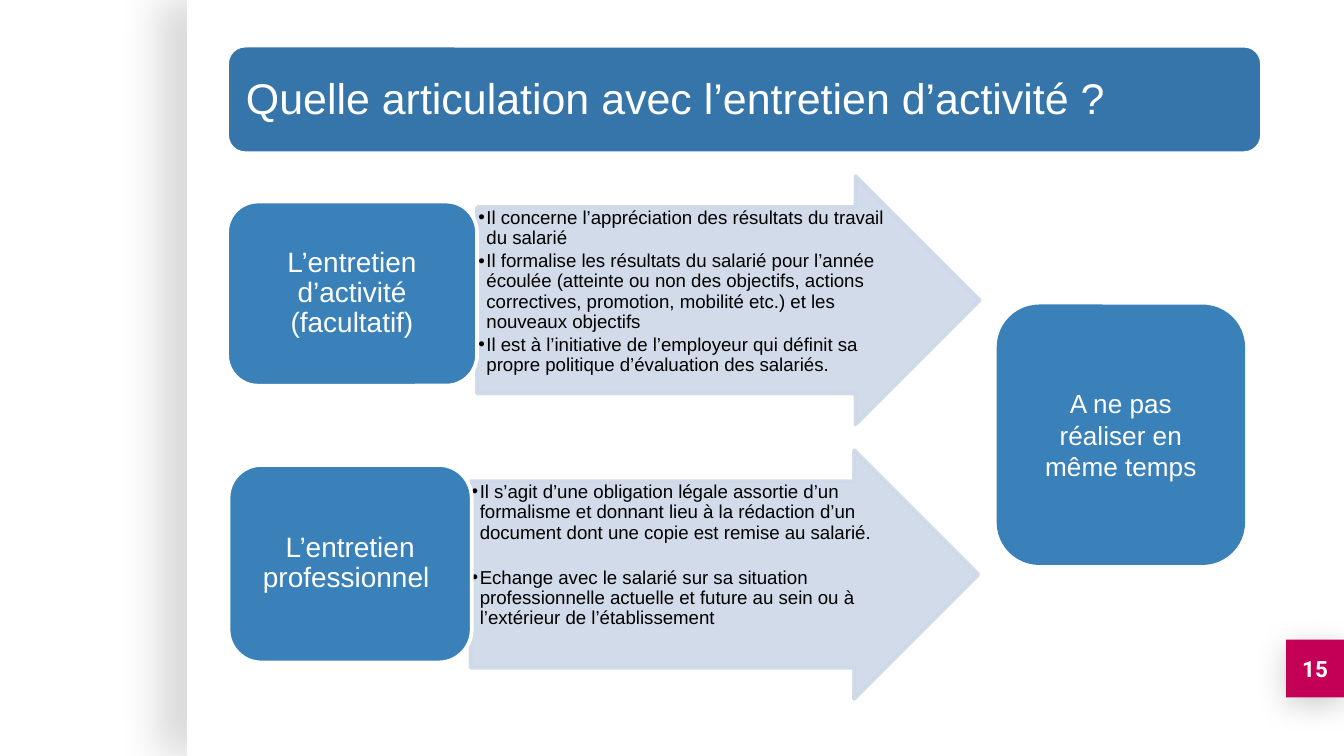
import pptx
import pptx.util
import pptx.dml.color
import pptx.enum.shapes
import pptx.enum.text
import pptx.oxml.ns
from dataclasses import dataclass
from lxml import etree

Inches = pptx.util.Inches
Pt = pptx.util.Pt
qn = pptx.oxml.ns.qn
Preset = pptx.enum.shapes.MSO_SHAPE
Align = pptx.enum.text.PP_ALIGN


@dataclass(frozen=True)
class Theme:
    white: str = "FFFFFF"
    black: str = "000000"
    banner: str = "3575A9"
    block: str = "3A81BA"
    arrow: str = "CED8E7"
    accent: str = "C40056"
    font: str = "Arial"
    number_font: str = "Roboto"
    title_size: float = 23
    topic_size: float = 15
    advice_size: float = 14
    number_size: float = 12
    detail_size: float = 10


theme = Theme()


def add_block(preset, place, fill, line=None):
    shape = slide.shapes.add_shape(preset, *map(Inches, place))
    shape.shadow.inherit = False
    shape.fill.solid()
    shape.fill.fore_color.rgb = pptx.dml.color.RGBColor.from_string(fill)
    if line:
        shape.line.color.rgb = pptx.dml.color.RGBColor.from_string(line)
        shape.line.width = Pt(2)
    else:
        shape.line.fill.background()
    return shape


def write_text(shape, texts, size, color=theme.white, font=theme.font, bold=False,
               align=Align.CENTER, anchor=pptx.enum.text.MSO_ANCHOR.MIDDLE,
               insets=(0.1, 0.1, 0.1, 0.1), spacing=0.9, after=0, gap=0, bullet=None):
    frame = shape.text_frame
    frame.word_wrap = True
    frame.auto_size = pptx.enum.text.MSO_AUTO_SIZE.NONE
    frame.vertical_anchor = anchor
    frame.margin_left, frame.margin_top, frame.margin_right, frame.margin_bottom = map(Inches, insets)
    for index, text in enumerate(texts):
        para = frame.add_paragraph() if index else frame.paragraphs[0]
        if bullet:
            properties = para._p.get_or_add_pPr()
            properties.set("marL", str(Inches(0.06)))
            properties.set("indent", str(-Inches(0.06)))
            bullet_color = etree.SubElement(properties, qn("a:buClr"))
            etree.SubElement(bullet_color, qn("a:srgbClr"), val=color)
            etree.SubElement(properties, qn("a:buFont"), typeface=font)
            etree.SubElement(properties, qn("a:buChar"), char=bullet)
        para.alignment = align
        para.line_spacing = spacing
        para.space_before = Pt(gap if index else 0)
        para.space_after = Pt(after)
        span = para.add_run()
        span.text = text
        span.font.name = font
        span.font.size = Pt(size)
        span.font.bold = bold
        span.font.color.rgb = pptx.dml.color.RGBColor.from_string(color)


deck = pptx.Presentation()
deck.slide_width = Inches(10)
deck.slide_height = deck.slide_width * 9 // 16
slide = deck.slides.add_slide(deck.slide_layouts[5])

panel = add_block(Preset.RECTANGLE, (1.39, 0, 8.61, 5.62), theme.white)
panel.height = deck.slide_height
number = add_block(Preset.RECTANGLE, (9.57, 4.76, 0.43, 0.43), theme.accent)
for shape, opacity, blur, distance, angle in [(panel, 15, 22.5, 15, 180), (number, 20, 16.9, 3.8, 90)]:
    effects = shape.element.spPr.find(qn("a:effectLst"))
    shadow = etree.SubElement(effects, qn("a:outerShdw"), blurRad=str(Pt(blur)), dist=str(Pt(distance)),
                              dir=str(angle * 60000), algn="ctr", rotWithShape="0")
    shadow_color = etree.SubElement(shadow, qn("a:srgbClr"), val=theme.black)
    etree.SubElement(shadow_color, qn("a:alpha"), val=str(opacity * 1000))
write_text(number, ["15"], theme.number_size, font=theme.number_font, bold=True, spacing=1)

banner = add_block(Preset.ROUNDED_RECTANGLE, (1.69, 0.34, 7.7, 0.8), theme.banner, theme.white)
title = slide.shapes.title
title.left, title.top, title.width, title.height = map(Inches, (1.73, 0.38, 7.62, 0.74))
banner.element.addnext(title.element)
write_text(title, ["Quelle articulation avec l’entretien d’activité ?"], theme.title_size, align=Align.LEFT)

interviews = [
    ("L’entretien d’activité (facultatif)", (1.69, 1.5, 1.86, 1.37), (3.55, 1.31, 3.74, 1.85), 0, [
        "Il concerne l’appréciation des résultats du travail du salarié",
        "Il formalise les résultats du salarié pour l’année écoulée (atteinte ou non des objectifs, "
        "actions correctives, promotion, mobilité etc.) et les nouveaux objectifs",
        "Il est à l’initiative de l’employeur qui définit sa propre politique d’évaluation des salariés.",
    ]),
    ("L’entretien professionnel ", (1.7, 3.46, 1.81, 1.47), (3.5, 3.35, 3.78, 1.85), 12, [
        "Il s’agit d’une obligation légale assortie d’un formalisme et donnant lieu à la rédaction "
        "d’un document dont une copie est remise au salarié.",
        "Echange avec le salarié sur sa situation professionnelle actuelle et future au sein ou à "
        "l’extérieur de l’établissement",
    ]),
]
for topic, topic_place, arrow_place, gap, details in interviews:
    arrow = add_block(Preset.RIGHT_ARROW, arrow_place, theme.arrow, theme.arrow)
    arrow.adjustments[0] = 0.75
    arrow.adjustments[1] = 0.5
    for tint in arrow.element.spPr.iter(qn("a:srgbClr")):
        etree.SubElement(tint, qn("a:alpha"), val="90000")
    left, top, width, height = arrow_place
    detail_place = (left, top + height / 8, width - 0.7, height * 0.75)
    detail_box = slide.shapes.add_textbox(*map(Inches, detail_place))
    write_text(detail_box, details, theme.detail_size, color=theme.black, align=Align.LEFT,
               anchor=pptx.enum.text.MSO_ANCHOR.TOP, insets=(0.01, 0.01, 0.01, 0.01),
               after=1.5, gap=gap, bullet="•")
    block = add_block(Preset.ROUNDED_RECTANGLE, topic_place, theme.block, theme.white)
    write_text(block, [topic], theme.topic_size, insets=(0.06, 0.03, 0.06, 0.03))

advice = add_block(Preset.ROUNDED_RECTANGLE, (7.43, 2.28, 1.82, 1.91), theme.block, theme.block)
write_text(advice, ["A ne pas réaliser en même temps"], theme.advice_size,
           insets=(0.1, 0.05, 0.1, 0.05), spacing=1)

deck.save("out.pptx")
